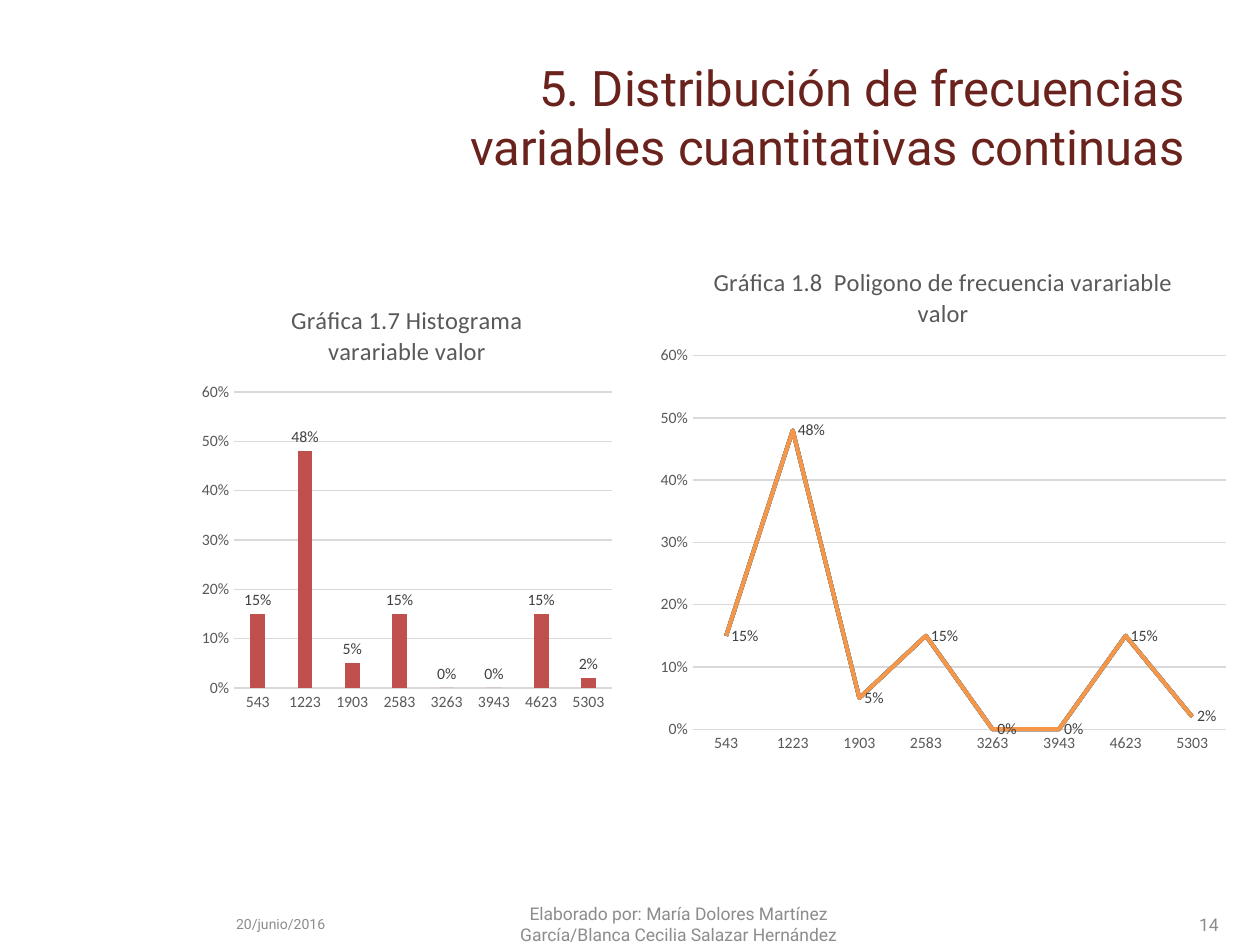
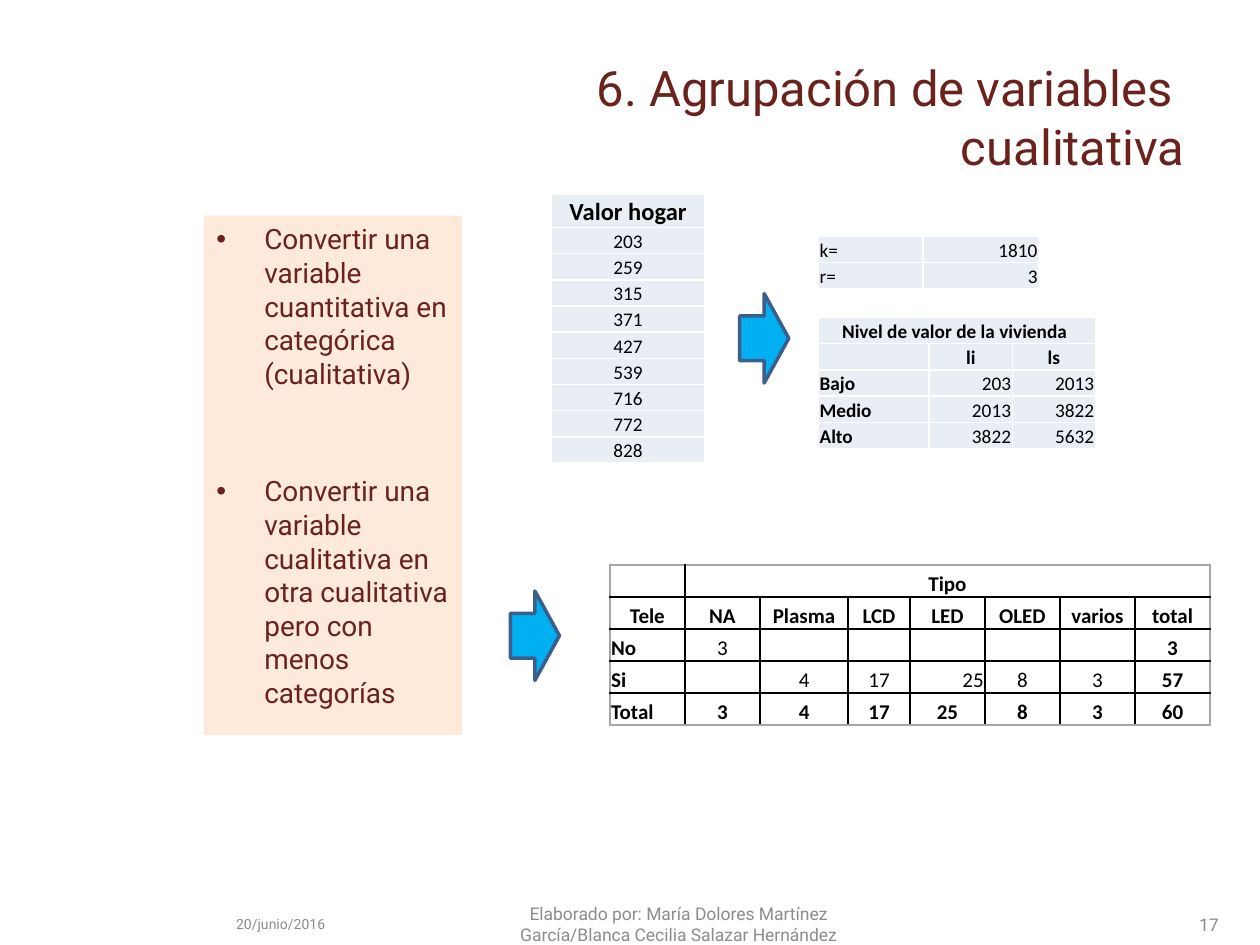
from lxml import etree
from pptx import Presentation
from pptx.chart.data import CategoryChartData
from pptx.dml.color import RGBColor
from pptx.enum.chart import XL_CHART_TYPE, XL_LABEL_POSITION, XL_TICK_MARK, XL_MARKER_STYLE
from pptx.enum.shapes import MSO_SHAPE
from pptx.enum.text import MSO_ANCHOR, MSO_AUTO_SIZE, PP_ALIGN
from pptx.oxml.ns import qn
from pptx.util import Emu, Inches, Pt

LEFT, CENTER, RIGHT = PP_ALIGN.LEFT, PP_ALIGN.CENTER, PP_ALIGN.RIGHT
TOP, MIDDLE, BOTTOM = MSO_ANCHOR.TOP, MSO_ANCHOR.MIDDLE, MSO_ANCHOR.BOTTOM
NO_AUTOFIT = MSO_AUTO_SIZE.NONE
COLUMN_CHART, LINE_CHART = XL_CHART_TYPE.COLUMN_CLUSTERED, XL_CHART_TYPE.LINE
ABOVE, BESIDE = XL_LABEL_POSITION.OUTSIDE_END, XL_LABEL_POSITION.RIGHT
NO_MARKER, NO_TICK = XL_MARKER_STYLE.NONE, XL_TICK_MARK.NONE
ARROW = MSO_SHAPE.RIGHT_ARROW

HEADING_FONT, DATA_FONT = "Roboto", "Calibri"
COLORS = {
    "heading": "6A221D", "footer": "8C8C8C", "panel": "FDEADA",
    "arrow": "00B0F0", "arrow_line": "3A5F8C",
    "cell": "E9EDF4", "white": "FFFFFF", "black": "000000", "frame": "A6A6A6",
    "axis_text": "595959", "label": "404040", "grid": "D9D9D9", "bar": "C0504D",
}
POLYGON_COLORS = ["276A7C", "4D3B62", "F9AB6B", "6FBDD1",
                  "8064A2", "B65708", "4BACC6", "F79646"]

presentation = Presentation()
presentation.slide_width = Inches(10)
presentation.slide_height = Inches(7.5)
COLUMN = presentation.slide_width / 100
ROW = presentation.slide_height / 75


def place(left, top, width, height):
    return [Emu(round(share)) for share in
            (left * COLUMN, top * ROW, width * COLUMN, height * ROW)]


def add_grid_table(slide, left, top, widths, heights, rows, size,
                   cell_fill="cell", inside="white", outside="white", heading_start=None):
    frame = slide.shapes.add_table(len(rows), len(widths),
                                   *place(left, top, sum(widths), sum(heights)))
    table = frame.table
    table.first_row = table.horz_banding = False
    for column, width in zip(table.columns, widths):
        column.width = Emu(round(width * COLUMN))
    for row, height in zip(table.rows, heights):
        row.height = Emu(round(height * ROW))
    last_row, last_column = len(rows) - 1, len(widths) - 1
    alignments = {"l": LEFT, "c": CENTER, "r": RIGHT}
    for row_index, (styles, texts) in enumerate(rows):
        for column_index, (style, text) in enumerate(zip(styles, texts)):
            cell = table.cell(row_index, column_index)
            cell.vertical_anchor = BOTTOM
            cell.margin_left = cell.margin_right = cell.margin_top = Inches(0.01)
            cell.margin_bottom = 0
            paragraph = cell.text_frame.paragraphs[0]
            paragraph.alignment = alignments[style.lower()]
            if text:
                run = paragraph.add_run()
                run.text = text
                run.font.name, run.font.size = DATA_FONT, Pt(size)
                run.font.bold = style.isupper()
                run.font.color.rgb = RGBColor.from_string(COLORS["black"])
            else:
                etree.SubElement(paragraph._p, qn("a:endParaRPr"), sz=str(size * 100))
            is_heading = row_index == 0 and column_index == heading_start
            edges = {"L": column_index == 0, "R": column_index == last_column or is_heading,
                     "T": row_index == 0, "B": row_index == last_row}
            properties = cell._tc.get_or_add_tcPr()
            for side, is_outer in edges.items():
                line = etree.SubElement(properties, qn("a:ln" + side), w=str(Pt(1)))
                solid = etree.SubElement(line, qn("a:solidFill"))
                etree.SubElement(solid, qn("a:srgbClr"),
                                 val=COLORS[outside if is_outer else inside])
            if cell_fill:
                cell.fill.solid()
                cell.fill.fore_color.rgb = RGBColor.from_string(COLORS[cell_fill])
            else:
                cell.fill.background()
    if heading_start is not None:
        table.cell(0, heading_start).merge(table.cell(0, last_column))
    return table


pages = [
    (5, ["5. Distribución de frecuencias", "variables cuantitativas continuas"], "14"),
    (1, ["6. Agrupación de variables ", "cualitativa"], "17"),
]
for layout_index, title_lines, page_number in pages:
    slide = presentation.slides.add_slide(presentation.slide_layouts[layout_index])
    title = slide.shapes.title
    title.left, title.top, title.width, title.height = place(18.5, 3, 76.5, 12.5)
    title.text_frame.auto_size = NO_AUTOFIT
    title.text_frame.vertical_anchor = MIDDLE
    paragraph = title.text_frame.paragraphs[0]
    paragraph.alignment = RIGHT
    for index, text in enumerate(title_lines):
        if index:
            paragraph.add_line_break()
        run = paragraph.add_run()
        run.text = text
        run.font.name, run.font.size = HEADING_FONT, Pt(28)
        run.font.color.rgb = RGBColor.from_string(COLORS["heading"])

    footers = [
        ("20/junio/2016", 10.64, 23.3, 8, CENTER),
        ("Elaborado por: María Dolores Martínez García/Blanca Cecilia Salazar Hernández",
         38, 31.7, 10, CENTER),
        (page_number, 74.4, 23.3, 10, RIGHT),
    ]
    for text, left, width, size, alignment in footers:
        footer = slide.shapes.add_textbox(*place(left, 71.35, width, 4))
        footer.text_frame.word_wrap = True
        footer.text_frame.vertical_anchor = MIDDLE
        paragraph = footer.text_frame.paragraphs[0]
        paragraph.alignment = alignment
        run = paragraph.add_run()
        run.text = text
        run.font.name, run.font.size = HEADING_FONT, Pt(size)
        run.font.color.rgb = RGBColor.from_string(COLORS["footer"])

charts_slide, grouping_slide = presentation.slides

class_marks = [542.5 + 680 * step for step in range(8)]
frequencies = [0.15, 0.48, 0.05, 0.15, 0, 0, 0.15, 0.02]
charts = [
    (COLUMN_CHART, "Gráfica 1.7 Histograma varariable valor",
     (15.35, 22.5, 33.9, 34.65), [COLORS["bar"]], ABOVE),
    (LINE_CHART, "Gráfica 1.8  Poligono de frecuencia varariable valor",
     (51.5, 19.35, 46.7, 41.2), POLYGON_COLORS, BESIDE),
]
for chart_type, chart_title, area, series_colors, label_position in charts:
    chart_data = CategoryChartData(number_format="0%")
    chart_data.categories = class_marks
    chart_data.categories.number_format = "0"
    for number in range(1, len(series_colors) + 1):
        chart_data.add_series(f"Series {number}", frequencies)
    chart = charts_slide.shapes.add_chart(chart_type, *place(*area), chart_data).chart
    chart.has_legend = False
    chart.font.name, chart.font.size = DATA_FONT, Pt(10)
    chart.font.color.rgb = RGBColor.from_string(COLORS["black"])

    chart.has_title = True
    chart.chart_title.include_in_layout = False
    run = chart.chart_title.text_frame.paragraphs[0].add_run()
    run.text = chart_title
    run.font.name, run.font.size, run.font.bold = DATA_FONT, Pt(14), False
    run.font.color.rgb = RGBColor.from_string(COLORS["axis_text"])

    category_axis, value_axis = chart.category_axis, chart.value_axis
    for axis, number_format in ((category_axis, "0"), (value_axis, "0%")):
        axis.major_tick_mark = axis.minor_tick_mark = NO_TICK
        axis.tick_labels.number_format = number_format
        axis.tick_labels.number_format_is_linked = False
        axis_font = axis.tick_labels.font
        axis_font.name, axis_font.size = DATA_FONT, Pt(9)
        axis_font.color.rgb = RGBColor.from_string(COLORS["axis_text"])
    value_axis.minimum_scale, value_axis.maximum_scale, value_axis.major_unit = 0, 0.6, 0.1
    value_axis.format.line.fill.background()
    for line in (category_axis.format.line, value_axis.major_gridlines.format.line):
        line.color.rgb = RGBColor.from_string(COLORS["grid"])
        line.width = Pt(0.75)

    plot = chart.plots[0]
    plot.vary_by_categories = False
    if chart_type == COLUMN_CHART:
        plot.gap_width = 219
    for series, color in zip(plot.series, series_colors):
        if chart_type == LINE_CHART:
            series.smooth = False
            series.marker.style = NO_MARKER
            series.format.line.color.rgb = RGBColor.from_string(color)
            series.format.line.width = Pt(2.25)
        else:
            series.format.fill.solid()
            series.format.fill.fore_color.rgb = RGBColor.from_string(color)
    labels = plot.series[len(series_colors) - 1].data_labels
    labels.show_value = True
    labels.position = label_position
    labels.number_format, labels.number_format_is_linked = "0%", True
    labels.font.name, labels.font.size = DATA_FONT, Pt(9)
    labels.font.color.rgb = RGBColor.from_string(COLORS["label"])

body = grouping_slide.placeholders[1]
body.left, body.top, body.width, body.height = place(16.18, 17.12, 20.5, 41.2)
body.fill.solid()
body.fill.fore_color.rgb = RGBColor.from_string(COLORS["panel"])
body.text_frame.auto_size = NO_AUTOFIT
body.text_frame.vertical_anchor = TOP
conversions = [
    ("Convertir una variable cuantitativa en categórica (cualitativa)", 0),
    ("Convertir una variable cualitativa en otra cualitativa pero con menos categorías", 48),
]
for index, (text, space_before) in enumerate(conversions):
    paragraph = body.text_frame.add_paragraph() if index else body.text_frame.paragraphs[0]
    paragraph.space_before = Pt(space_before)
    properties = paragraph._p.get_or_add_pPr()
    properties.set("marL", str(Inches(0.38)))
    properties.set("indent", str(-Inches(0.38)))
    etree.SubElement(properties, qn("a:buFont"), typeface="Arial")
    etree.SubElement(properties, qn("a:buChar"), char="•")
    run = paragraph.add_run()
    run.text = text
    run.font.name, run.font.size = HEADING_FONT, Pt(16)
    run.font.color.rgb = RGBColor.from_string(COLORS["heading"])

home_values = ["203", "259", "315", "371", "427", "539", "716", "772", "828"]
values_table = add_grid_table(
    grouping_slide, 43.75, 15.45, [12.2], [2.6] + [2.08] * 9,
    [("C", ["Valor hogar"])] + [("c", [value]) for value in home_values], 11)
values_table.cell(0, 0).text_frame.paragraphs[0].runs[0].font.size = Pt(14)

add_grid_table(
    grouping_slide, 64.95, 25.2, [8.8, 6.6, 6.6], [2.08] * 5,
    [("CCC", ["Nivel de valor de la vivienda ", "", ""]),
     ("CCC", ["", "li", "ls"]),
     ("Lrr", ["Bajo", "203", "2013"]),
     ("Lrr", ["Medio", "2013", "3822"]),
     ("Lrr", ["Alto", "3822", "5632"])],
    11, heading_start=0)

add_grid_table(grouping_slide, 64.95, 18.75, [8.3, 9.2], [2.08] * 2,
               [("lr", ["k=", "1810"]), ("lr", ["r=", "3"])], 11)

add_grid_table(
    grouping_slide, 48.4, 44.85, [5.96, 5.96, 7, 4.9, 5.96, 5.96, 5.96, 5.96], [2.54] * 5,
    [("CCCCCCCC", ["", "Tipo", "", "", "", "", "", ""]),
     ("CCCCCCCC", ["Tele", "NA", "Plasma", "LCD", "LED", "OLED", "varios", "total"]),
     ("LccccccC", ["No", "3", "", "", "", "", "", "3"]),
     ("LcccrccC", ["Si", "", "4", "17", "25", "8", "3", "57"]),
     ("LCCCCCCC", ["Total", "3", "4", "17", "25", "8", "3", "60"])],
    12, None, "black", "frame", heading_start=1)

for left, top in [(58.7, 23.3), (40.5, 46.9)]:
    arrow = grouping_slide.shapes.add_shape(ARROW, *place(left, top, 3.9, 7.1))
    arrow.shadow.inherit = False
    arrow.fill.solid()
    arrow.fill.fore_color.rgb = RGBColor.from_string(COLORS["arrow"])
    arrow.line.color.rgb = RGBColor.from_string(COLORS["arrow_line"])
    arrow.line.width = Pt(2)

presentation.save("out.pptx")
